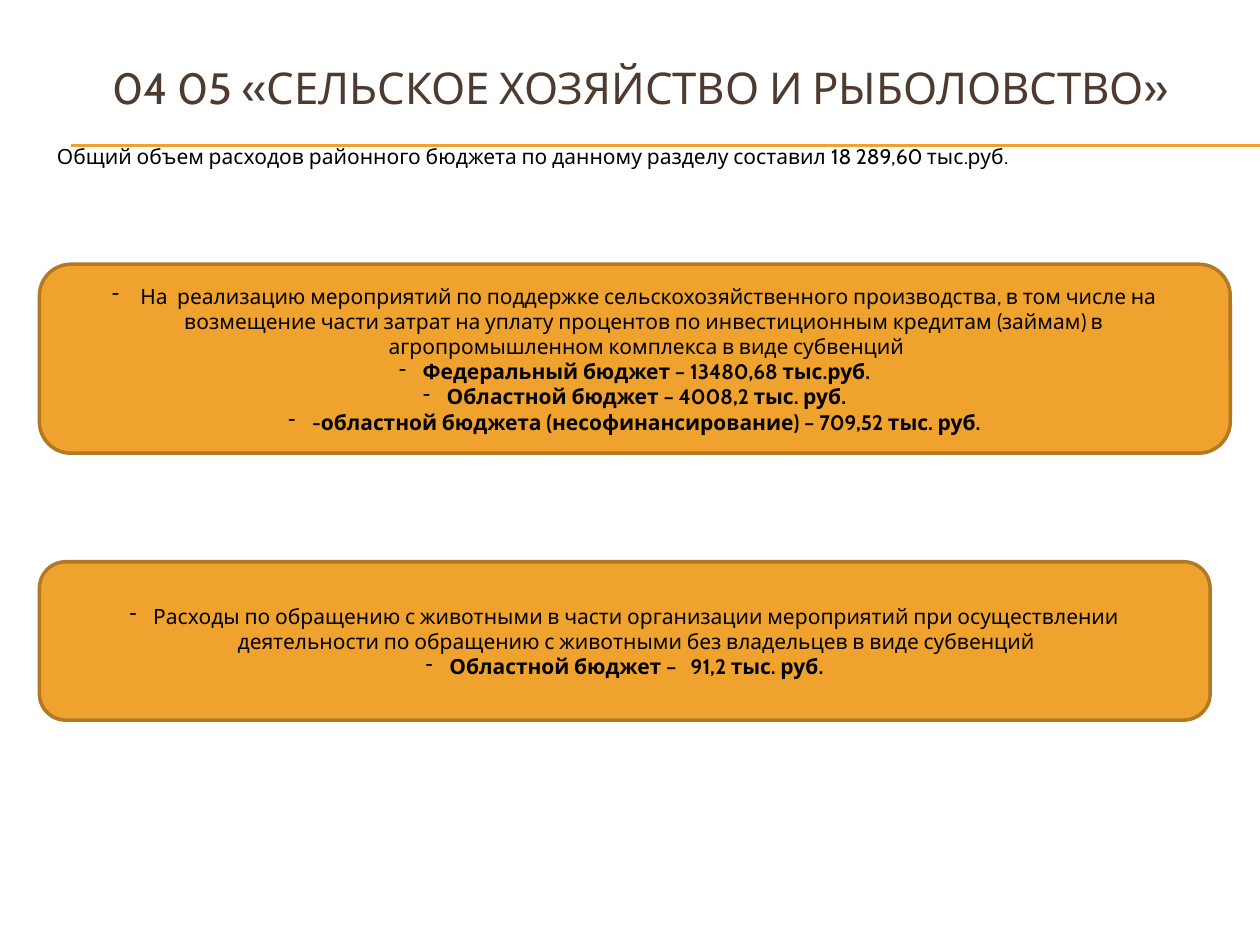
from lxml import etree
from pptx import Presentation
from pptx.dml.color import RGBColor
from pptx.enum import shapes, text
from pptx.oxml import ns
from pptx.util import Pt

COLORS = {"accent": "F0A22E", "border": "B27822", "title": "4E3B30", "body": "000000"}
FONT = "Cabin"


def color(name):
    return RGBColor.from_string(COLORS[name])


def write(shape, lines, size, ink, align):
    frame = shape.text_frame
    frame.word_wrap = True
    frame.vertical_anchor = text.MSO_ANCHOR.MIDDLE
    for index, (line, bold) in enumerate(lines):
        paragraph = frame.paragraphs[0] if index == 0 else frame.add_paragraph()
        paragraph.text = line
        paragraph.alignment = align
        font = paragraph.runs[0].font
        font.name, font.size, font.bold = FONT, Pt(size), bold
        font.color.rgb = color(ink)


presentation = Presentation()
presentation.slide_width, presentation.slide_height = Pt(720), Pt(540)
slide = presentation.slides.add_slide(presentation.slide_layouts[6])

for y in (82.8, 83.5):
    rule = slide.shapes.add_connector(
        shapes.MSO_CONNECTOR.STRAIGHT, Pt(40.5), Pt(y), Pt(720), Pt(y))
    rule.line.color.rgb = color("accent")
    rule.line.width = Pt(0.75)
    etree.SubElement(rule._element.spPr, ns.qn("a:effectLst"))

title = slide.shapes.add_textbox(Pt(24), Pt(16.5), Pt(684), Pt(66))
write(title, [("04 05 «СЕЛЬСКОЕ ХОЗЯЙСТВО И РЫБОЛОВСТВО»", False)],
      25, "title", text.PP_ALIGN.CENTER)

summary = slide.shapes.add_textbox(Pt(11.5), Pt(78.5), Pt(698), Pt(21))
write(summary, [("Общий объем расходов районного бюджета по данному разделу "
                 "составил 18 289,60 тыс.руб.", False)],
      12, "body", text.PP_ALIGN.JUSTIFY)
summary.text_frame.paragraphs[0]._p.get_or_add_pPr().set("indent", str(Pt(14)))

boxes = [
    (151, 680.5, 108, [
        (" На  реализацию мероприятий по поддержке сельскохозяйственного производства, "
         "в том числе на возмещение части затрат на уплату процентов по инвестиционным "
         "кредитам (займам) в  агропромышленном комплекса в виде субвенций", False),
        ("Федеральный бюджет – 13480,68 тыс.руб.", True),
        ("Областной бюджет – 4008,2 тыс. руб.", True),
        ("-областной бюджета (несофинансирование) – 709,52 тыс. руб.", True),
    ]),
    (321, 669, 90.5, [
        ("Расходы по обращению с животными в части организации мероприятий при "
         "осуществлении деятельности по обращению с животными без владельцев "
         "в виде субвенций", False),
        ("Областной бюджет –   91,2 тыс. руб.", True),
    ]),
]

for top, width, height, lines in boxes:
    box = slide.shapes.add_shape(
        shapes.MSO_SHAPE.ROUNDED_RECTANGLE, Pt(22.5), Pt(top), Pt(width), Pt(height))
    box.shadow.inherit = False
    box.fill.solid()
    box.fill.fore_color.rgb = color("accent")
    box.line.color.rgb = color("border")
    box.line.width = Pt(2)
    write(box, lines, 12, "body", text.PP_ALIGN.CENTER)
    for paragraph in box.text_frame.paragraphs:
        properties = paragraph._p.get_or_add_pPr()
        properties.set("marL", str(Pt(13.5)))
        properties.set("indent", str(Pt(-13.5)))
        etree.SubElement(properties, ns.qn("a:buChar"), char="-")

presentation.save("out.pptx")
